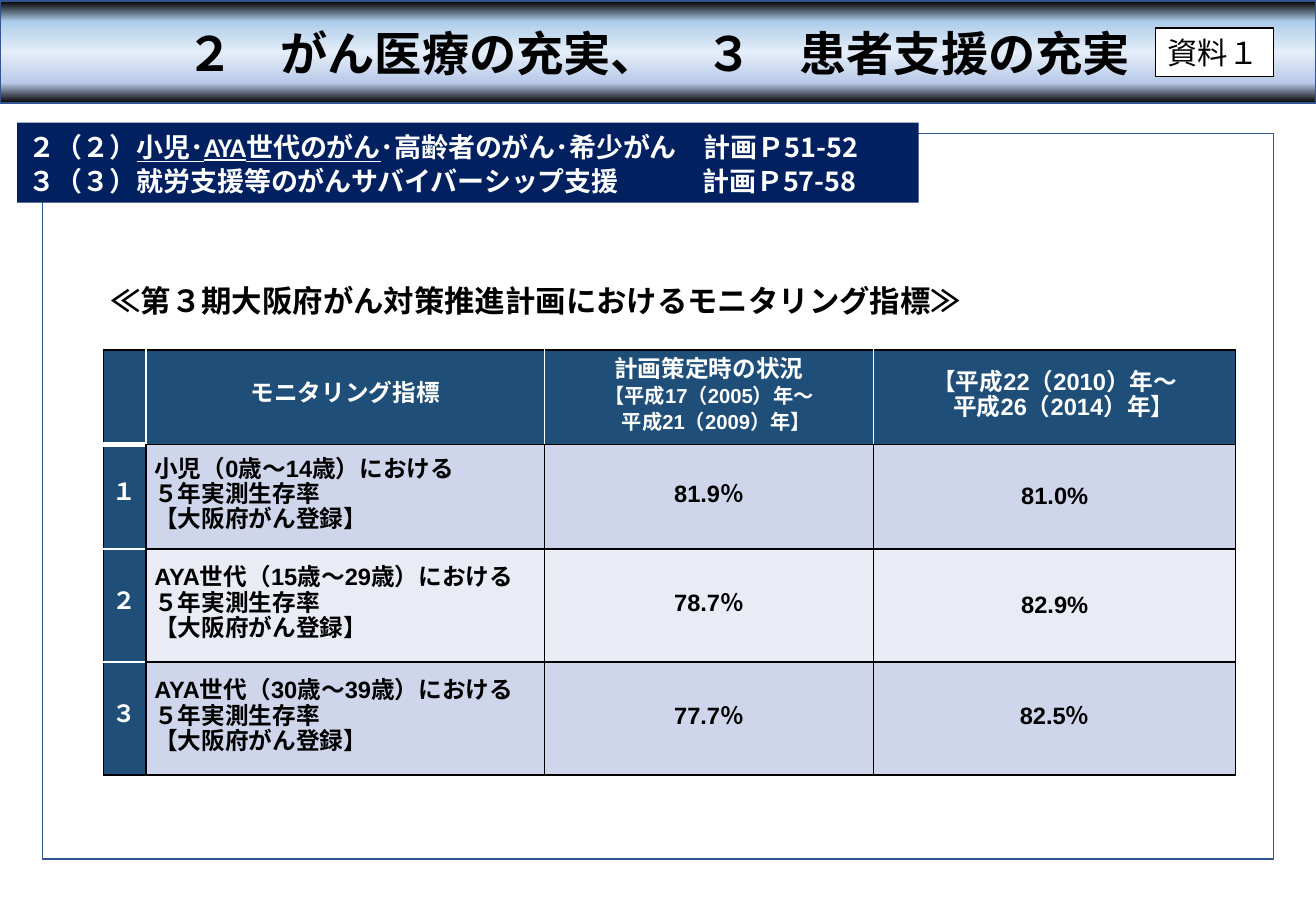
"""Build the slide on cancer care and patient support indicators."""
from dataclasses import dataclass

from lxml import etree
from pptx import Presentation
from pptx import util as u
from pptx.dml.color import RGBColor
from pptx.enum import shapes, text
from pptx.oxml.ns import qn

Inches, Pt = u.Inches, u.Pt
MID, TOP = text.MSO_ANCHOR.MIDDLE, text.MSO_ANCHOR.TOP
LEFT, CENTER = text.PP_ALIGN.LEFT, text.PP_ALIGN.CENTER


@dataclass(frozen=True)
class Theme:
    black: str = "000000"
    white: str = "FFFFFF"
    navy: str = "002060"
    head: str = "1F4E79"
    edge: str = "325491"
    bands: tuple = ("CFD5EA", "E9EBF5")
    fade: tuple = ((0, "000000"), (20, "ADCDEA"), (50, "E5EEF8"),
                   (80, "B9CAE9"), (100, "000000"))
    title: int = 28
    large: int = 18
    banner: int = 16
    cell: int = 14
    small: int = 12
    sans: str = "Calibri"
    grid: str = "Arial"
    kanji: str = "Noto Sans CJK JP"


T = Theme()
ROWS = (
    ("１", "小児（0歳～14歳）における", "81.9％", "81.0%"),
    ("２", "AYA世代（15歳～29歳）における", "78.7％", "82.9%"),
    ("３", "AYA世代（30歳～39歳）における", "77.7％", "82.5％"),
)


def write(frame, words, para=None, size=T.cell, font=T.sans, color=T.black,
          bold=True, under=False, align=LEFT, lead=None, indent=0, tab=None):
    """Add words as a new paragraph, or as a further run of para."""
    if para is None:
        para = frame.paragraphs[0]
        if para.runs:
            para = frame.add_paragraph()
        para.alignment = align
        if lead:
            para.line_spacing = Pt(lead)
        props = para._p.get_or_add_pPr()
        if indent:
            props.set("marL", str(Inches(indent)))
        if tab:
            stops = etree.SubElement(props, qn("a:tabLst"))
            etree.SubElement(stops, qn("a:tab"), pos=str(Inches(tab)), algn="l")
    run = para.add_run()
    run.text = words
    face = run.font
    face.size, face.name, face.bold, face.underline = Pt(size), font, bold, under
    face.color.rgb = RGBColor.from_string(color)
    etree.SubElement(run._r.get_or_add_rPr(), qn("a:ea"), typeface=T.kanji)
    return para


def paint(owner, color):
    """Give a shape or cell a solid fill."""
    owner.fill.solid()
    owner.fill.fore_color.rgb = RGBColor.from_string(color)


def add_box(slide, left, top, width, height, fill=None, line=None, anchor=MID):
    """Add a rectangle with optional fill and outline."""
    box = slide.shapes.add_shape(shapes.MSO_SHAPE.RECTANGLE, Inches(left),
                                 Inches(top), Inches(width), Inches(height))
    box.shadow.inherit = False
    if fill:
        paint(box, fill)
    else:
        box.fill.background()
    if line:
        box.line.color.rgb = RGBColor.from_string(line)
        box.line.width = Pt(1)
    else:
        box.line.fill.background()
    box.text_frame.word_wrap = True
    box.text_frame.vertical_anchor = anchor
    return box


def fade(box, stops):
    """Fill a shape with a vertical gradient."""
    box.fill.gradient()
    box.fill.gradient_angle = 270
    chain = box._element.spPr.find(qn("a:gradFill")).find(qn("a:gsLst"))
    for old in list(chain):
        chain.remove(old)
    for place, color in stops:
        stop = etree.SubElement(chain, qn("a:gs"), pos=str(place * 1000))
        etree.SubElement(stop, qn("a:srgbClr"), val=color)


def rule(cell, edges):
    """Draw the left, right, top and bottom borders of a cell."""
    props = cell._tc.get_or_add_tcPr()
    for spot, (side, (color, width)) in enumerate(zip("LRTB", edges)):
        line = etree.Element(qn("a:ln" + side), w=str(Pt(width)))
        solid = etree.SubElement(line, qn("a:solidFill"))
        etree.SubElement(solid, qn("a:srgbClr"), val=color)
        props.insert(spot, line)


def find_edges(row, col, last):
    """Return the four borders for a place in the table."""
    dark, light, thick = (T.black, 1), (T.white, 1), (T.white, 3)
    if row == 0:
        return (light if col else dark, dark if col == 3 else light,
                dark, dark if col else thick)
    if col == 0:
        return (dark, dark, thick if row == 1 else light,
                dark if row == last else light)
    return (dark,) * 4


def add_grid(slide):
    """Add the table of monitored indicators."""
    widths, heights = (0.35, 3.28, 2.71, 2.98), (0.78, 0.86, 0.93, 0.93)
    table = slide.shapes.add_table(
        len(heights), len(widths), Inches(0.85), Inches(2.88),
        Inches(sum(widths)), Inches(sum(heights))).table
    for part, width in zip(table.columns, widths):
        part.width = Inches(width)
    for part, height in zip(table.rows, heights):
        part.height = Inches(height)
    for row in range(len(heights)):
        for col in range(len(widths)):
            cell = table.cell(row, col)
            cell.vertical_anchor = MID
            cell.margin_left = cell.margin_right = Inches(0.07)
            cell.margin_top = cell.margin_bottom = 0
            plain = row and col
            paint(cell, T.bands[(row - 1) % 2] if plain else T.head)
            rule(cell, find_edges(row, col, len(ROWS)))

    head = dict(font=T.grid, color=T.white, align=CENTER)
    first, then, now = (table.cell(0, col).text_frame for col in (1, 2, 3))
    write(first, "モニタリング指標", lead=13, **head)
    write(then, "計画策定時の状況", lead=15, **head)
    write(then, "【平成17（2005）年～", size=T.small, lead=15, **head)
    write(then, "平成21（2009）年】", size=T.small, lead=15, indent=0.12, **head)
    write(now, "【平成22（2010）年～", lead=15, **head)
    write(now, "平成26（2014）年】", lead=15, indent=0.15, **head)
    for row, (mark, group, *rates) in enumerate(ROWS, 1):
        write(table.cell(row, 0).text_frame, mark, lead=13, **head)
        for line in (group, "５年実測生存率", "【大阪府がん登録】"):
            write(table.cell(row, 1).text_frame, line, font=T.grid, lead=15)
        for col, rate in enumerate(rates, 2):
            write(table.cell(row, col).text_frame, rate, font=T.grid,
                  align=CENTER, lead=15)


def add_banner(slide):
    """Add the navy banner with its two plan sections."""
    frame = add_box(slide, 0.14, 1.01, 7.42, 0.66, T.navy).text_frame
    look = dict(size=T.banner, color=T.white)
    line = write(frame, "２（２）", lead=20, **look)
    write(frame, "小児･AYA世代のがん", line, under=True, **look)
    write(frame, "･高齢者のがん･希少がん　計画", line, **look)
    write(frame, "Ｐ51-52", line, font=T.kanji, **look)
    line = write(frame, "３（３）就労支援等のがんサバイバーシップ支援\t計画",
                 lead=20, tab=5.54, **look)
    write(frame, "Ｐ57-58", line, font=T.kanji, **look)


def main():
    """Build and save the slide."""
    deck = Presentation()
    deck.slide_width, deck.slide_height = Inches(10.83), Inches(7.5)
    slide = deck.slides.add_slide(deck.slide_layouts[6])
    add_box(slide, 0.35, 1.1, 10.13, 5.97, T.white, T.edge)
    add_grid(slide)
    title = add_box(slide, 0, 0.01, 10.83, 0.84, line=T.edge)
    fade(title, T.fade)
    write(title.text_frame, "２　がん医療の充実、　３　患者支援の充実",
          size=T.title, font=T.kanji, align=CENTER)
    add_banner(slide)
    label = slide.shapes.add_textbox(Inches(0.81), Inches(2.27),
                                     Inches(8.89), Inches(0.4))
    label.text_frame.word_wrap = True
    write(label.text_frame, "≪第３期大阪府がん対策推進計画におけるモニタリング指標≫",
          size=T.large)
    tag = add_box(slide, 9.51, 0.23, 0.97, 0.4, T.white, T.black, TOP)
    write(tag.text_frame, "資料１", size=T.large, bold=False)
    deck.save("out.pptx")


if __name__ == "__main__":
    main()
